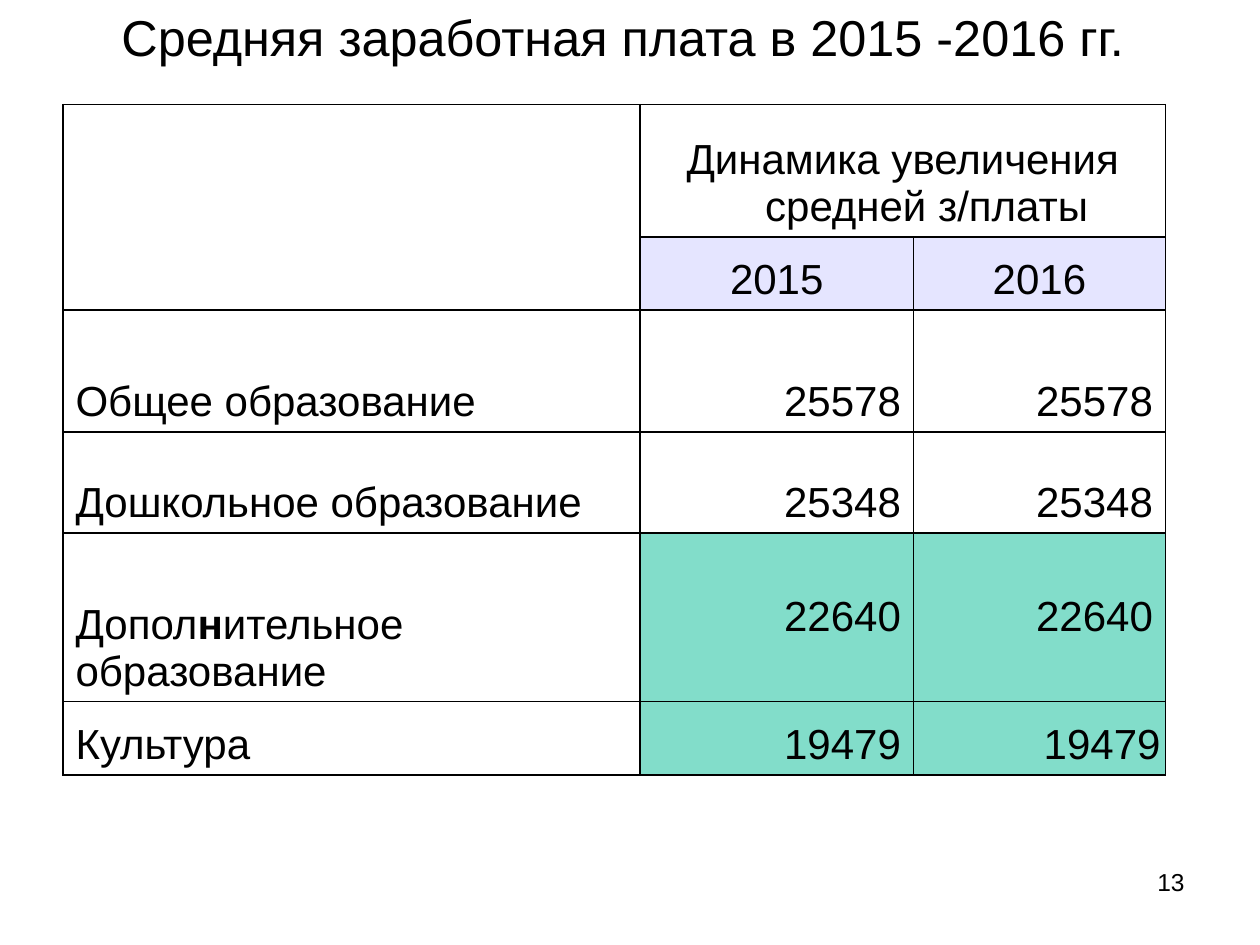
"""Build a slide with a table of average pay for 2015 and 2016."""
from lxml import etree
from pptx import Presentation
from pptx.dml.color import RGBColor
from pptx.enum.text import MSO_ANCHOR, PP_ALIGN
from pptx.oxml.ns import qn
from pptx.util import Inches, Pt

LEFT, MID, RIGHT = PP_ALIGN.LEFT, PP_ALIGN.CENTER, PP_ALIGN.RIGHT
TOP, CENTER, BOTTOM = MSO_ANCHOR.TOP, MSO_ANCHOR.MIDDLE, MSO_ANCHOR.BOTTOM
COLORS = {"ink": "000000", "head": "CCCCFF", "mark": "82DDCA"}
FONT = "Arial"
HANG = 0.38
PAD = (0.1, 0.05, 0.1, 0.05)

TITLE = "Средняя заработная плата в 2015 -2016 гг. "
NUMBER = "13"
COLS = [4.58, 2.17, 2]
ROWS = [1.05, 0.58, 0.97, 0.8, 1.34, 0.58]
GRID = [
    ["", "Динамика увеличения средней з/платы", ""],
    ["", "2015", "2016"],
    ["Общее образование", "25578", "25578"],
    ["Дошкольное образование", "25348", "25348"],
    [("Допол", "н", "ительное образование"), "22640", "22640"],
    ["Культура", "19479", "19479"],
]
MERGES = [((0, 0), (1, 0)), ((0, 1), (0, 2))]
FILLS = {1: "head", 4: "mark", 5: "mark"}
PADS = {(4, 1): (0.1, 0.48, 0.1, 0.1), (4, 2): (0.1, 0.48, 0.1, 0.1),
        (5, 2): (0.04, 0.05, 0.04, 0.05)}


def write(frame, text, size, align):
    """Fill the first paragraph; the odd parts of a tuple are bold."""
    para = frame.paragraphs[0]
    para.alignment = align
    parts = (text,) if isinstance(text, str) else text
    for i, part in enumerate(parts):
        run = para.add_run()
        run.text = part
        font = run.font
        font.name, font.size, font.bold = FONT, Pt(size), i % 2 == 1
        font.color.rgb = RGBColor.from_string(COLORS["ink"])
    return para


def border(cell):
    """Draw a thin line on each side of a cell."""
    props = cell._tc.get_or_add_tcPr()
    for side in ("lnL", "lnR", "lnT", "lnB"):
        line = etree.SubElement(props, qn("a:" + side), w=str(Pt(1)))
        fill = etree.SubElement(line, qn("a:solidFill"))
        etree.SubElement(fill, qn("a:srgbClr"), val=COLORS["ink"])


def paint(cell, name):
    """Set the fill of a cell; the head colour is half clear."""
    if name is None:
        cell.fill.background()
        return
    cell.fill.solid()
    cell.fill.fore_color.rgb = RGBColor.from_string(COLORS[name])
    if name == "head":
        color = cell._tc.tcPr.find(qn("a:solidFill")).find(qn("a:srgbClr"))
        etree.SubElement(color, qn("a:alpha"), val="50000")


def fill_cell(cell, row, col, text):
    """Format one cell and write its text."""
    border(cell)
    paint(cell, FILLS.get(row) if col else None)
    pad = PADS.get((row, col), PAD)
    (cell.margin_left, cell.margin_top,
     cell.margin_right, cell.margin_bottom) = map(Inches, pad)
    cell.vertical_anchor = TOP if row == 4 and col else BOTTOM
    if text:
        align = LEFT if col == 0 else MID if row < 2 else RIGHT
        para = write(cell.text_frame, text, 24, align)
        props = para._p.get_or_add_pPr()
        props.set("marL", str(Inches(HANG if isinstance(text, str) else 0)))
        props.set("indent", str(Inches(-HANG)))


def add_grid(slide):
    """Add the pay table."""
    table = slide.shapes.add_table(
        len(ROWS), len(COLS), Inches(0.5), Inches(0.83),
        Inches(sum(COLS)), Inches(sum(ROWS))).table
    table.first_row = table.horz_banding = False
    for col, width in zip(table.columns, COLS):
        col.width = Inches(width)
    for row, height in zip(table.rows, ROWS):
        row.height = Inches(height)
    for start, end in MERGES:
        table.cell(*start).merge(table.cell(*end))
    for r, line in enumerate(GRID):
        for c, text in enumerate(line):
            fill_cell(table.cell(r, c), r, c, text)


def main():
    """Build and save the slide."""
    deck = Presentation()
    deck.slide_width, deck.slide_height = Inches(10), Inches(7.5)
    slide = deck.slides.add_slide(deck.slide_layouts[5])
    title = slide.shapes.title
    title.left, title.top = Inches(0), Inches(0)
    title.width, title.height = Inches(10), Inches(0.58)
    title.text_frame.vertical_anchor = CENTER
    write(title.text_frame, TITLE, 28.8, MID)
    add_grid(slide)
    box = slide.shapes.add_textbox(
        Inches(7.17), Inches(6.83), Inches(2.33), Inches(0.52))
    box.text_frame.word_wrap = True
    write(box.text_frame, NUMBER, 14, RIGHT)
    deck.save("out.pptx")


if __name__ == "__main__":
    main()
